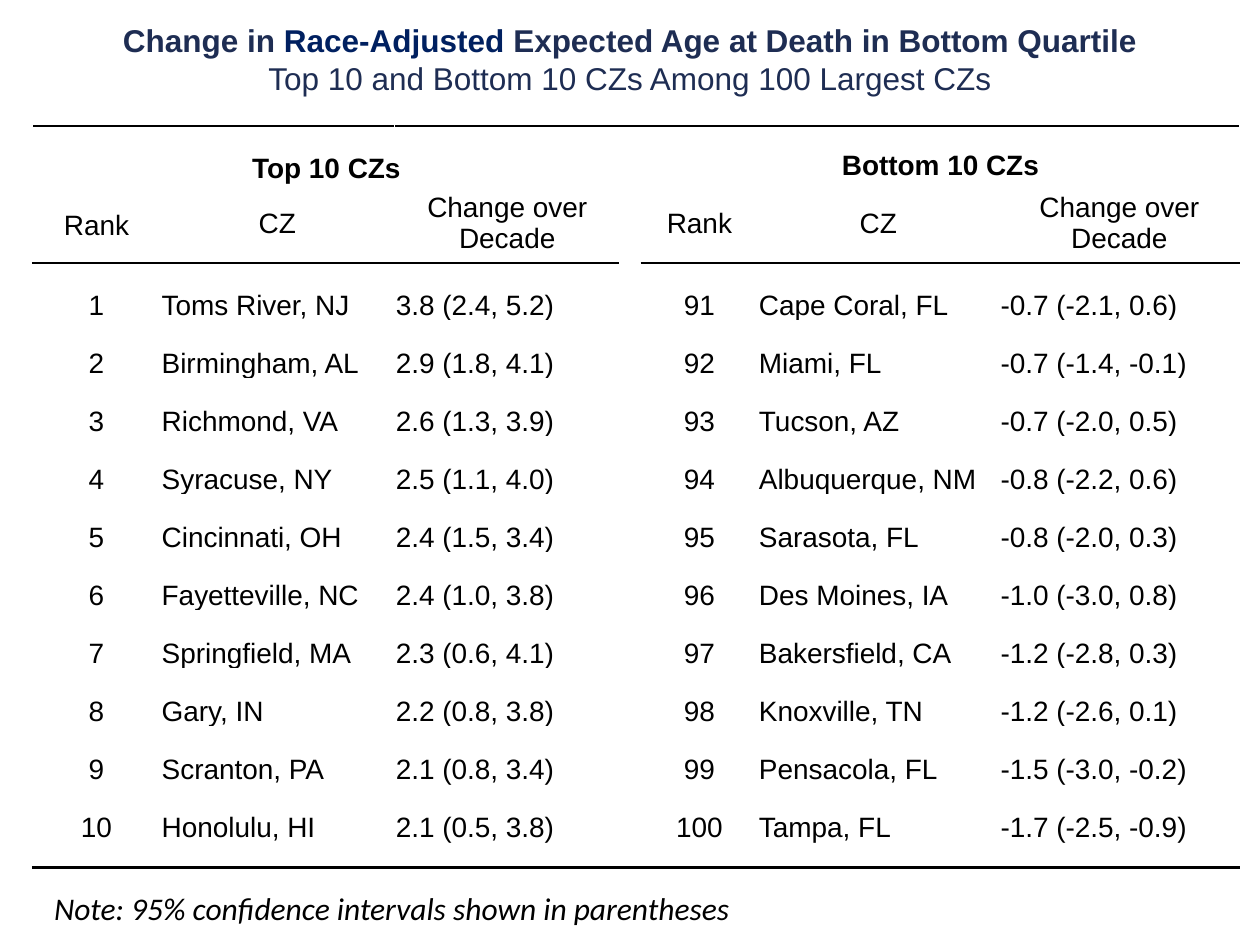
import lxml.etree
import pptx
import pptx.dml.color
import pptx.enum.text
import pptx.oxml.ns
import pptx.util

Cm = pptx.util.Cm
Pt = pptx.util.Pt
Color = pptx.dml.color.RGBColor.from_string
Align = pptx.enum.text.PP_ALIGN
Anchor = pptx.enum.text.MSO_ANCHOR
AutoSize = pptx.enum.text.MSO_AUTO_SIZE

TITLE = [
    [("Change in ", "title"), ("Race-Adjusted ", "emphasis"),
     ("Expected Age at Death in Bottom Quartile", "title")],
    [("Top 10 and Bottom 10 CZs Among 100 Largest CZs", "subtitle")],
]
NOTE = [[("Note: 95% confidence intervals shown in parentheses", "note")]]
HEADINGS = ["Rank", "CZ", "Change over Decade"]
GROUPS = [
    {"name": "Top 10 CZs", "column": 0, "first_rank": 1, "spacing": 1.15, "zones": [
        ("Toms River, NJ", "3.8 (2.4, 5.2)"),
        ("Birmingham, AL", "2.9 (1.8, 4.1)"),
        ("Richmond, VA", "2.6 (1.3, 3.9)"),
        ("Syracuse, NY", "2.5 (1.1, 4.0)"),
        ("Cincinnati, OH", "2.4 (1.5, 3.4)"),
        ("Fayetteville, NC", "2.4 (1.0, 3.8)"),
        ("Springfield, MA", "2.3 (0.6, 4.1)"),
        ("Gary, IN", "2.2 (0.8, 3.8)"),
        ("Scranton, PA", "2.1 (0.8, 3.4)"),
        ("Honolulu, HI", "2.1 (0.5, 3.8)"),
    ]},
    {"name": "Bottom 10 CZs", "column": 4, "first_rank": 91, "spacing": 1, "zones": [
        ("Cape Coral, FL", "-0.7 (-2.1, 0.6)"),
        ("Miami, FL", "-0.7 (-1.4, -0.1)"),
        ("Tucson, AZ", "-0.7 (-2.0, 0.5)"),
        ("Albuquerque, NM", "-0.8 (-2.2, 0.6)"),
        ("Sarasota, FL", "-0.8 (-2.0, 0.3)"),
        ("Des Moines, IA", "-1.0 (-3.0, 0.8)"),
        ("Bakersfield, CA", "-1.2 (-2.8, 0.3)"),
        ("Knoxville, TN", "-1.2 (-2.6, 0.1)"),
        ("Pensacola, FL", "-1.5 (-3.0, -0.2)"),
        ("Tampa, FL", "-1.7 (-2.5, -0.9)"),
    ]},
]

THEME = {
    "paper": "FFFFFF",
    "rule": "000000",
    "thin": Pt(1),
    "thick": Pt(1.5),
    "title": ("1E2D53", {"name": "Arial", "size": Pt(18), "bold": True}),
    "emphasis": ("002060", {"name": "Arial", "size": Pt(18), "bold": True}),
    "subtitle": ("1E2D53", {"name": "Arial", "size": Pt(18), "bold": False}),
    "heading": ("000000", {"name": "Arial", "size": Pt(16), "bold": True}),
    "body": ("000000", {"name": "Arial", "size": Pt(16), "bold": False}),
    "note": ("000000", {"name": "Calibri", "size": Pt(18), "italic": True}),
}
HEADER_CELL = {"vertical_anchor": Anchor.MIDDLE, "margin_left": Cm(0.15),
               "margin_right": Cm(0.15), "margin_top": 0, "margin_bottom": 0}
BODY_CELL = {"vertical_anchor": Anchor.BOTTOM, "margin_left": Cm(0.03),
             "margin_right": Cm(0.03), "margin_top": Cm(0.03), "margin_bottom": 0}
TITLE_FRAME = {"word_wrap": True, "margin_left": 0, "margin_right": 0,
               "margin_top": 0, "margin_bottom": 0,
               "auto_size": AutoSize.SHAPE_TO_FIT_TEXT}
NOTE_FRAME = {"word_wrap": False, "auto_size": AutoSize.SHAPE_TO_FIT_TEXT}

BAND_ROW, GROUP_ROW, HEADING_ROW, FIRST_ROW = range(4)
ZONE_COUNT = len(GROUPS[0]["zones"])
CLOSING_ROW = FIRST_ROW + ZONE_COUNT
COLUMN_WIDTHS = [2.57, 4.72, 4.55, 0.43, 2.34, 4.87, 4.85]
ROW_HEIGHTS = [0.44, 0.74, 1.58] + [1.17] * ZONE_COUNT + [0.49]


def apply(target, values):
    for name, value in values.items():
        setattr(target, name, value)


def add_run(paragraph, text, style):
    color, font = THEME[style]
    run = paragraph.add_run()
    run.text = text
    apply(run.font, font)
    run.font.color.rgb = Color(color)


def add_text(slide, place, lines, frame_format, alignment):
    frame = slide.shapes.add_textbox(*map(Cm, place)).text_frame
    apply(frame, frame_format)
    for index, line in enumerate(lines):
        paragraph = frame.add_paragraph() if index else frame.paragraphs[0]
        paragraph.alignment = alignment
        for text, style in line:
            add_run(paragraph, text, style)


def fill_cell(cell, text, style, cell_format, alignment, spacing=1):
    apply(cell, cell_format)
    paragraph = cell.text_frame.paragraphs[0]
    apply(paragraph, {"alignment": alignment, "line_spacing": spacing})
    add_run(paragraph, text, style)


def shrink_empty(cell):
    apply(cell, HEADER_CELL)
    paragraph = cell.text_frame.paragraphs[0]
    end = lxml.etree.SubElement(paragraph._p, pptx.oxml.ns.qn("a:endParaRPr"))
    end.set("sz", "800")


def borders(row, column):
    edges = {}
    if row == BAND_ROW:
        edges = {"L": ("paper", "thin"), "R": ("paper", "thin"), "T": ("rule", "thick")}
    elif row == HEADING_ROW and column != 3:
        edges = {"B": ("rule", "thin")}
    elif row == FIRST_ROW and column != 3:
        edges = {"T": ("rule", "thin")}
    elif row == CLOSING_ROW:
        edges = {"B": ("rule", "thick")}
    return edges


def draw_borders(cell, edges):
    qn = pptx.oxml.ns.qn
    properties = cell._tc.get_or_add_tcPr()
    for side, (color, width) in edges.items():
        line = lxml.etree.SubElement(properties, qn("a:ln" + side), w=str(THEME[width]))
        fill = lxml.etree.SubElement(line, qn("a:solidFill"))
        lxml.etree.SubElement(fill, qn("a:srgbClr"), val=THEME[color])


def fill_group(table, group):
    left, spacing = group["column"], group["spacing"]
    fill_cell(table.cell(GROUP_ROW, left), group["name"], "heading",
              HEADER_CELL, Align.CENTER, spacing)
    for offset, heading in enumerate(HEADINGS):
        fill_cell(table.cell(HEADING_ROW, left + offset), heading, "body",
                  HEADER_CELL, Align.CENTER, 1 if offset else spacing)
    for index, zone in enumerate(group["zones"]):
        values = (str(group["first_rank"] + index), *zone)
        for offset, value in enumerate(values):
            fill_cell(table.cell(FIRST_ROW + index, left + offset), value, "body",
                      BODY_CELL, Align.LEFT if offset else Align.CENTER)


def add_ranking(slide):
    table = slide.shapes.add_table(
        len(ROW_HEIGHTS), len(COLUMN_WIDTHS), Cm(0.66), Cm(2.54),
        Cm(sum(COLUMN_WIDTHS)), Cm(sum(ROW_HEIGHTS))).table
    apply(table, {"first_row": False, "horz_banding": False})
    for column, width in zip(table.columns, COLUMN_WIDTHS):
        column.width = Cm(width)
    for row, height in zip(table.rows, ROW_HEIGHTS):
        row.height = Cm(height)
    for row, first, last in [(BAND_ROW, 0, 1), (BAND_ROW, 2, 6),
                             (GROUP_ROW, 0, 2), (GROUP_ROW, 4, 6)]:
        table.cell(row, first).merge(table.cell(row, last))
    for group in GROUPS:
        fill_group(table, group)
    for row in range(len(ROW_HEIGHTS)):
        for column in range(len(COLUMN_WIDTHS)):
            cell = table.cell(row, column)
            if not cell.text_frame.text:
                shrink_empty(cell)
            draw_borders(cell, borders(row, column))
            cell.fill.solid()
            cell.fill.fore_color.rgb = Color(THEME["paper"])


def main():
    presentation = pptx.Presentation()
    apply(presentation, {"slide_width": Cm(25.4), "slide_height": Cm(19.05)})
    slide = presentation.slides.add_slide(presentation.slide_layouts[6])
    add_ranking(slide)
    add_text(slide, (0, 0.43, 25.4, 1.55), TITLE, TITLE_FRAME, Align.CENTER)
    add_text(slide, (0.84, 17.8, 14.45, 1.02), NOTE, NOTE_FRAME, Align.LEFT)
    presentation.save("out.pptx")


if __name__ == "__main__":
    main()
